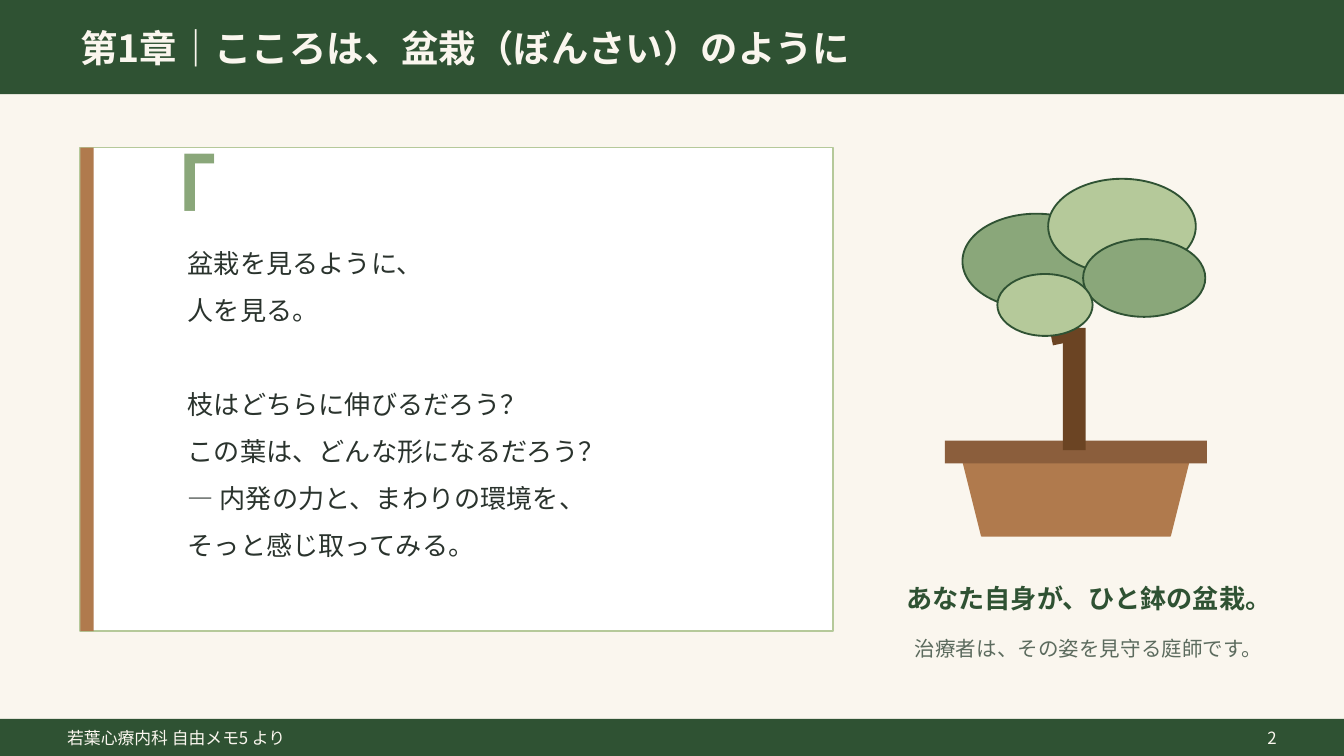
from pptx import Presentation
from pptx.dml.color import RGBColor
from pptx.enum.shapes import MSO_SHAPE as Shape
from pptx.enum.text import MSO_ANCHOR as Anchor, PP_ALIGN as Align
from pptx.oxml.ns import qn
from pptx.util import Cm, Pt
from lxml.etree import SubElement

FONT = "Noto Sans CJK JP"
CREAM = RGBColor(0xFA, 0xF6, 0xEE)
WHITE = RGBColor(0xFF, 0xFF, 0xFF)
FOREST = RGBColor(0x2F, 0x52, 0x33)
LEAF = RGBColor(0x8A, 0xA7, 0x7A)
SPROUT = RGBColor(0xB5, 0xC9, 0x9A)
CLAY = RGBColor(0xB0, 0x7A, 0x4D)
RIM = RGBColor(0x8B, 0x5E, 0x3C)
BARK = RGBColor(0x6B, 0x44, 0x23)
INK = RGBColor(0x2A, 0x33, 0x2D)
MUTED = RGBColor(0x5C, 0x6B, 0x5E)

WIDTH, HEIGHT = 25.4, 14.29
HEADER_H, FOOTER_H = 1.78, 0.7
FOOTER_Y = HEIGHT - FOOTER_H
CARD_X, CARD_Y, CARD_W, CARD_H = 1.52, 2.79, 14.22, 9.14
CAPTION_X, CAPTION_W = 16.26, 8.64

prs = Presentation()
prs.slide_width, prs.slide_height = Cm(WIDTH), Cm(HEIGHT)
slide = prs.slides.add_slide(prs.slide_layouts[6])
slide.background.fill.solid()
slide.background.fill.fore_color.rgb = CREAM


def add_figure(kind, x, y, w, h, fill, outline=None):
    figure = slide.shapes.add_shape(kind, Cm(x), Cm(y), Cm(w), Cm(h))
    figure.shadow.inherit = False
    figure.fill.solid()
    figure.fill.fore_color.rgb = fill
    if outline is None:
        figure.line.fill.background()
    else:
        figure.line.color.rgb = outline
        figure.line.width = Pt(1)
    return figure


def add_text(text, x, y, w, h, size, color, bold=False, align=Align.LEFT):
    """Add a vertically centred text box, one paragraph per line of text."""
    frame = slide.shapes.add_textbox(Cm(x), Cm(y), Cm(w), Cm(h)).text_frame
    frame.word_wrap = True
    frame.vertical_anchor = Anchor.MIDDLE
    frame.text = text
    for paragraph in frame.paragraphs:
        paragraph.alignment = align
        for run in paragraph.runs:
            run.font.size = Pt(size)
            run.font.bold = bold
            run.font.color.rgb = color
            run.font.name = FONT
            SubElement(run.font._element, qn("a:ea")).set("typeface", FONT)
    return frame


# Header
add_figure(Shape.RECTANGLE, 0, 0, WIDTH, HEADER_H, FOREST)
add_text("第1章｜こころは、盆栽（ぼんさい）のように",
         1.27, 0, 22.86, HEADER_H, 20, CREAM, bold=True)

# Poem card
add_figure(Shape.RECTANGLE, CARD_X, CARD_Y, CARD_W, CARD_H, WHITE, SPROUT)
add_figure(Shape.RECTANGLE, CARD_X, CARD_Y, 0.25, CARD_H, CLAY)
add_text("「", 2.16, 2.92, 1.52, 1.52, 48, LEAF, bold=True)
poem_lines = [
    "盆栽を見るように、",
    "人を見る。",
    "枝はどちらに伸びるだろう？",
    "この葉は、どんな形になるだろう？",
    "― 内発の力と、まわりの環境を、",
    "そっと感じ取ってみる。",
]
poem = add_text("\n".join(poem_lines), 3.3, 3.56, 11.94, 7.87, 14, INK)
for line in poem.paragraphs:
    line.line_spacing = 1.5
second_stanza = poem.paragraphs[2]
second_stanza.space_before = Pt(25.2)

# Bonsai: pot, trunk and crown
pot = add_figure(Shape.TRAPEZOID, 18.19, 8.66, 4.29, 1.47, CLAY, CLAY)
pot.element.spPr.xfrm.set("flipV", "1")
add_figure(Shape.RECTANGLE, 17.86, 8.33, 4.95, 0.43, RIM)
add_figure(Shape.RECTANGLE, 20.09, 6.2, 0.43, 2.31, BARK)
branch = add_figure(Shape.RECTANGLE, 19.76, 5.18, 0.43, 1.32, BARK)
branch.rotation = -12
for x, y, w, h, green in [
    (18.19, 4.04, 2.79, 1.8, LEAF),
    (19.81, 3.38, 2.79, 1.8, SPROUT),
    (20.47, 4.52, 2.31, 1.47, LEAF),
    (18.85, 5.18, 1.8, 1.17, SPROUT),
]:
    add_figure(Shape.OVAL, x, y, w, h, green, FOREST)

# Captions
add_text("あなた自身が、ひと鉢の盆栽。", CAPTION_X, 10.8, CAPTION_W, 1.02,
         14, FOREST, bold=True, align=Align.CENTER)
add_text("治療者は、その姿を見守る庭師です。", CAPTION_X, 11.81, CAPTION_W, 0.89,
         11, MUTED, align=Align.CENTER)

# Footer
add_figure(Shape.RECTANGLE, 0, FOOTER_Y, WIDTH, FOOTER_H, FOREST)
add_text("若葉心療内科 自由メモ5 より", 1.02, FOOTER_Y, 15.24, FOOTER_H, 9, CREAM)
add_text("2", 22.86, FOOTER_Y, 1.52, FOOTER_H, 9, CREAM, align=Align.RIGHT)

prs.save("out.pptx")
